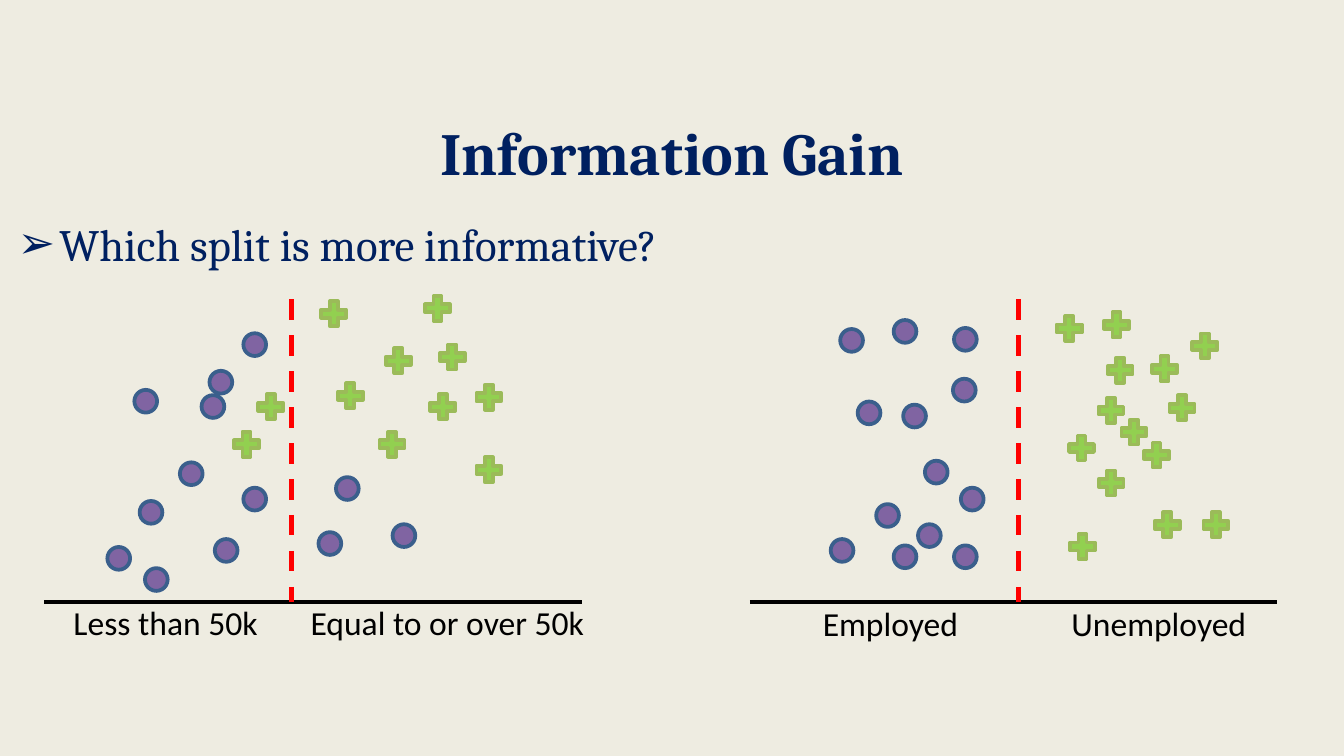
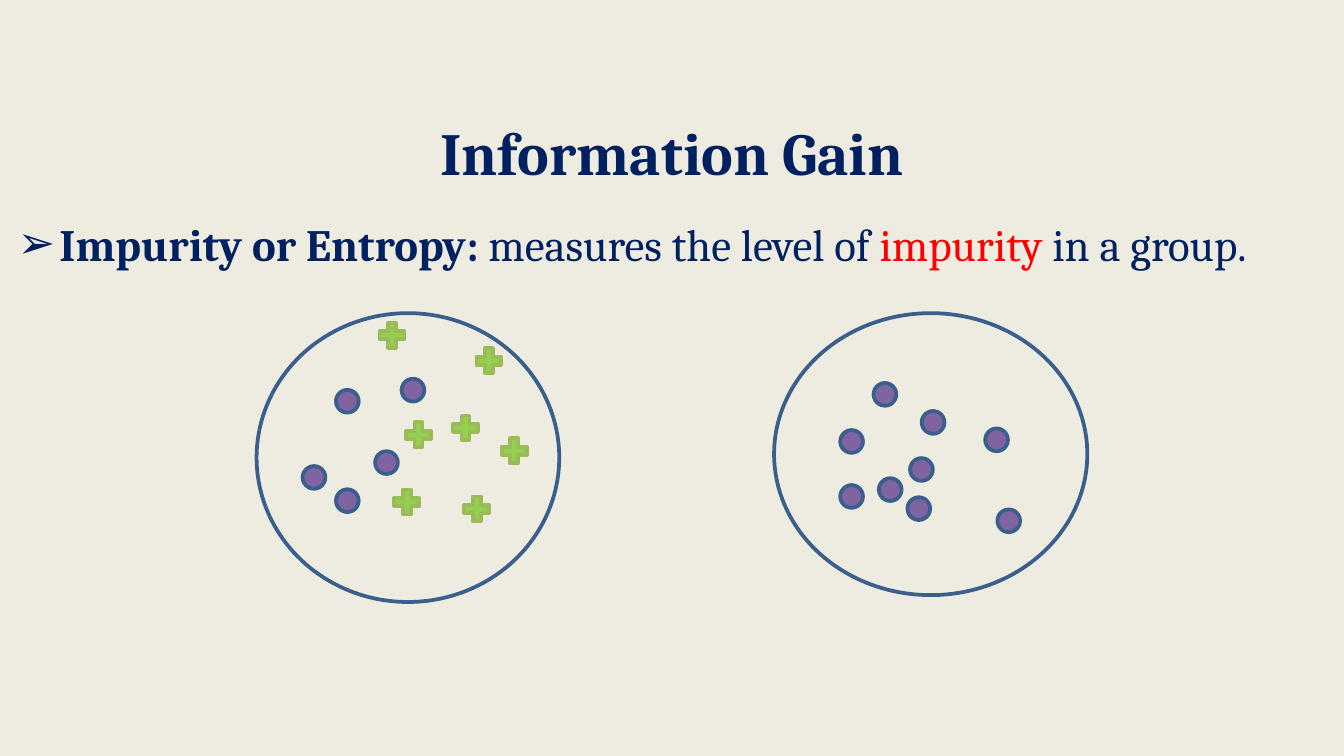
from lxml import etree
from pptx import Presentation
from pptx import util as u
from pptx.dml.color import RGBColor
from pptx.enum import dml, shapes, text
from pptx.oxml.ns import qn

CREAM = RGBColor(0xEE, 0xEC, 0xE1)
NAVY = RGBColor(0x00, 0x20, 0x60)
RED = RGBColor(0xFF, 0x00, 0x00)
BLACK = RGBColor(0x00, 0x00, 0x00)
PURPLE = RGBColor(0x80, 0x64, 0xA2)
BLUE = RGBColor(0x3A, 0x5F, 0x8C)
LIME = RGBColor(0x92, 0xD0, 0x50)
OLIVE = RGBColor(0x9B, 0xBB, 0x59)

HEAD = {"name": "Cambria", "size": u.Pt(32), "bold": True, "color": NAVY}
BODY = {"name": "Cambria", "size": u.Pt(24), "bold": False, "color": NAVY}
NOTE = {"name": "Calibri", "size": u.Pt(18), "color": BLACK}

DOT, PLUS = 0.43, 0.64
FLOOR = 11.38
INDENT = 0.79


class Deck:
    """Holds the style, the current slide and the shapes being filled."""

    def __init__(self):
        self.prs = Presentation()
        self.prs.slide_width = u.Cm(25.4)
        self.prs.slide_height = u.Cm(14.29)
        back = self.prs.slide_master.background.fill
        back.solid()
        back.fore_color.rgb = CREAM

    def page(self, title, parts):
        """Start a slide with a title and one bullet made of (text, format) parts."""
        self.slide = self.prs.slides.add_slide(self.prs.slide_layouts[1])
        self.shapes = self.slide.shapes
        head, body = self.slide.placeholders
        para = self.frame(head, 0, 2.06, 25.4, 1.52)
        para.alignment = text.PP_ALIGN.CENTER
        self.run(para, title, HEAD)
        para = self.frame(body, 0.08, 3.96, 25.32, 1.27)
        self.bullet(para)
        for words, extra in parts:
            self.run(para, words, {**BODY, **extra})

    def frame(self, box, x, y, w, h):
        """Place a text holder and return its first paragraph."""
        place = {"left": x, "top": y, "width": w, "height": h}
        for key, val in place.items():
            setattr(box, key, u.Cm(val))
        look = {"word_wrap": True, "auto_size": text.MSO_AUTO_SIZE.NONE,
                "vertical_anchor": text.MSO_ANCHOR.TOP}
        for key, val in look.items():
            setattr(box.text_frame, key, val)
        para = box.text_frame.paragraphs[0]
        para.space_before = u.Pt(0)
        return para

    def bullet(self, para):
        props = para._p.get_or_add_pPr()
        props.set("marL", str(u.Cm(INDENT)))
        props.set("indent", str(-u.Cm(INDENT)))
        etree.SubElement(props, qn("a:buChar")).set("char", "➢")

    def run(self, para, words, style):
        run = para.add_run()
        run.text = words
        for key, val in style.items():
            if key == "color":
                run.font.color.rgb = val
            else:
                setattr(run.font, key, val)

    def label(self, words, x, y, w=4.4):
        box = self.shapes.add_textbox(0, 0, 0, 0)
        self.run(self.frame(box, x, y, w, 1.02), words, NOTE)

    def line(self, x1, y1, x2, y2, color, width, dash=None):
        ends = [u.Cm(v) for v in (x1, y1, x2, y2)]
        line = self.shapes.add_connector(shapes.MSO_CONNECTOR.STRAIGHT, *ends)
        line.line.color.rgb = color
        line.line.width = u.Pt(width)
        if dash:
            line.line.dash_style = dash
        etree.SubElement(line._element.spPr, qn("a:effectLst"))

    def shape(self, kind, x, y, w, h, edge, fill=None):
        shape = self.shapes.add_shape(kind, *[u.Cm(v) for v in (x, y, w, h)])
        shape.shadow.inherit = False
        shape.line.color.rgb = edge
        shape.line.width = u.Pt(2)
        if fill is None:
            shape.fill.background()
        else:
            shape.fill.solid()
            shape.fill.fore_color.rgb = fill

    def dots(self, spots):
        for x, y in spots:
            self.shape(shapes.MSO_SHAPE.OVAL, x, y, DOT, DOT, BLUE, PURPLE)

    def pluses(self, spots):
        for x, y in spots:
            self.shape(shapes.MSO_SHAPE.MATH_PLUS, x, y, PLUS, PLUS, OLIVE, LIME)

    def split(self, left, right, mid, dots, pluses):
        """Draw a base line cut by a dashed border, with its marks."""
        self.line(left, FLOOR, right, FLOOR, BLACK, 2.25)
        self.line(mid, 5.66, mid, FLOOR, RED, 2.75, dml.MSO_LINE.DASH)
        self.dots(dots)
        self.pluses(pluses)

    def ring(self, x, y, w, h, dots, pluses=()):
        """Draw a circled set of marks as one group."""
        self.shapes = self.slide.shapes.add_group_shape().shapes
        self.shape(shapes.MSO_SHAPE.OVAL, x, y, w, h, BLUE)
        self.dots(dots)
        self.pluses(pluses)
        self.shapes = self.slide.shapes


def main():
    deck = Deck()

    deck.page("Information Gain", [("Which split is more informative?", {})])
    deck.split(
        0.84, 11, 5.51,
        dots=[(2.64, 9.47), (6.35, 9.02), (2.54, 7.37), (4.6, 9.22),
              (3.96, 7.01), (2.03, 10.34), (4.6, 6.3), (4.06, 10.19),
              (3.4, 8.74), (3.81, 7.47), (2.74, 10.74), (7.42, 9.91),
              (6.02, 10.06)],
        pluses=[(5.99, 5.61), (7.09, 8.08), (6.3, 7.16), (7.95, 5.51),
                (8.92, 7.19), (8.23, 6.43), (7.21, 6.5), (8.92, 8.56),
                (8.05, 7.37), (4.8, 7.37), (4.34, 8.08)])
    deck.split(
        14.17, 24.13, 19.25,
        dots=[(16.56, 9.53), (16.89, 10.31), (18.03, 10.31), (18.16, 9.22),
              (17.48, 8.71), (17.35, 9.91), (18.01, 7.16), (15.7, 10.19),
              (16.89, 6.05), (18.03, 6.2), (16.21, 7.59), (17.07, 7.65),
              (15.88, 6.22)],
        pluses=[(20.68, 7.44), (20.68, 8.81), (20.12, 8.15), (20.78, 5.82),
                (21.69, 6.65), (22.02, 7.39), (20.85, 6.68), (22.45, 6.22),
                (21.74, 9.6), (22.66, 9.6), (20.14, 10.01), (19.89, 5.89),
                (21.11, 7.85), (21.54, 8.28)])
    deck.label("Less than 50k", 1.14, 11.25)
    deck.label("Equal to or over 50k", 5.62, 11.25, 6.4)
    deck.label("Employed", 15.3, 11.28)
    deck.label("Unemployed", 20, 11.28)

    deck.page("Information Gain", [
        ("Impurity or Entropy: ", {"bold": True}),
        ("measures the level of ", {}),
        ("impurity", {"color": RED}),
        (" in a group.", {})])
    deck.ring(
        14.63, 5.92, 5.92, 5.33,
        dots=[(15.88, 8.13), (15.88, 9.17), (17.42, 7.77), (17.15, 9.4),
              (18.85, 9.63), (18.62, 8.1), (16.51, 7.24), (17.2, 8.66),
              (16.61, 9.04)])
    deck.ring(
        4.85, 5.92, 5.72, 5.46,
        dots=[(6.35, 7.37), (5.72, 8.81), (6.35, 9.25), (7.09, 8.53),
              (7.59, 7.16)],
        pluses=[(7.09, 6.02), (8.92, 6.5), (7.59, 7.9), (7.37, 9.17),
                (8.48, 7.77), (8.69, 9.3), (9.4, 8.2)])

    deck.prs.save("out.pptx")


if __name__ == "__main__":
    main()
